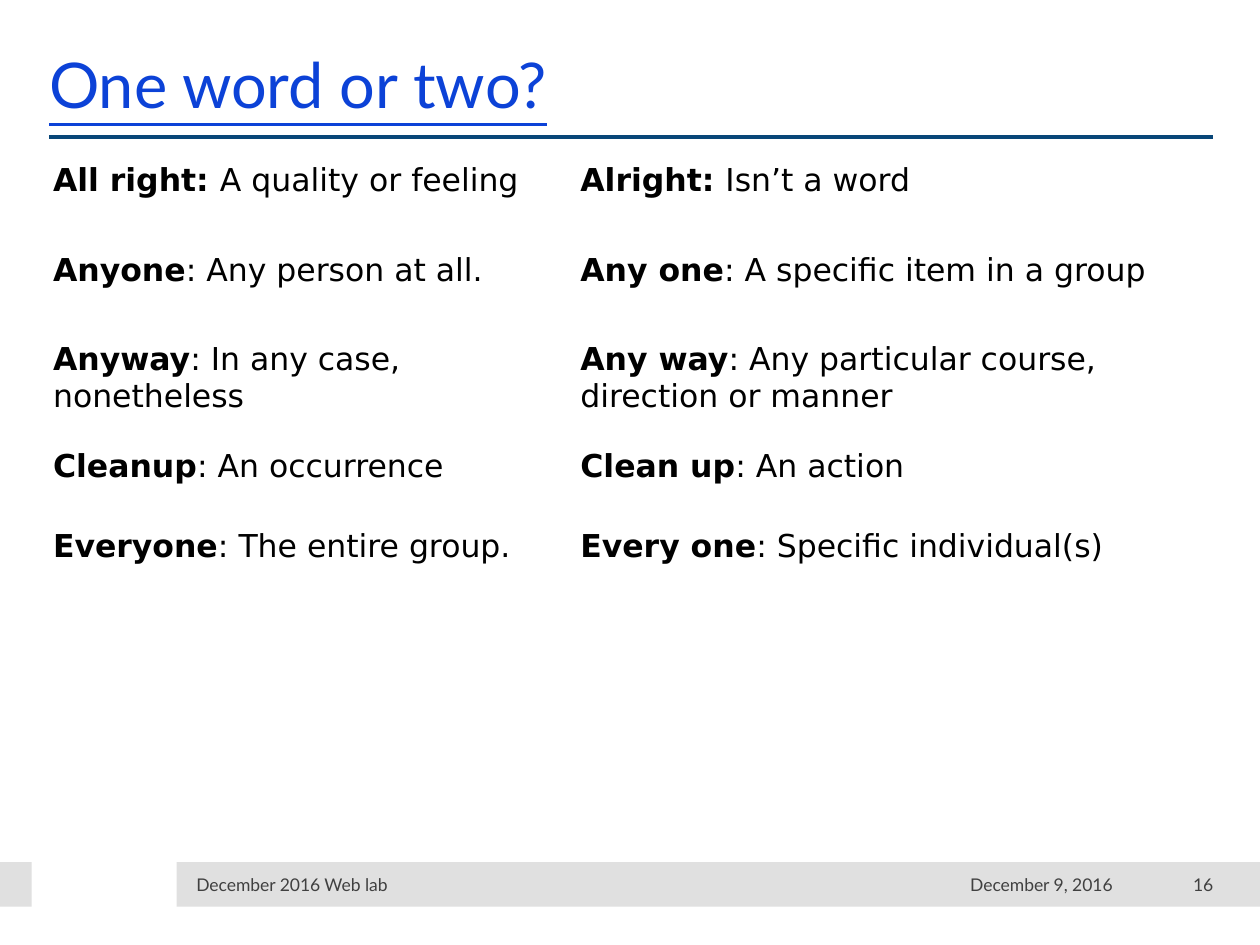
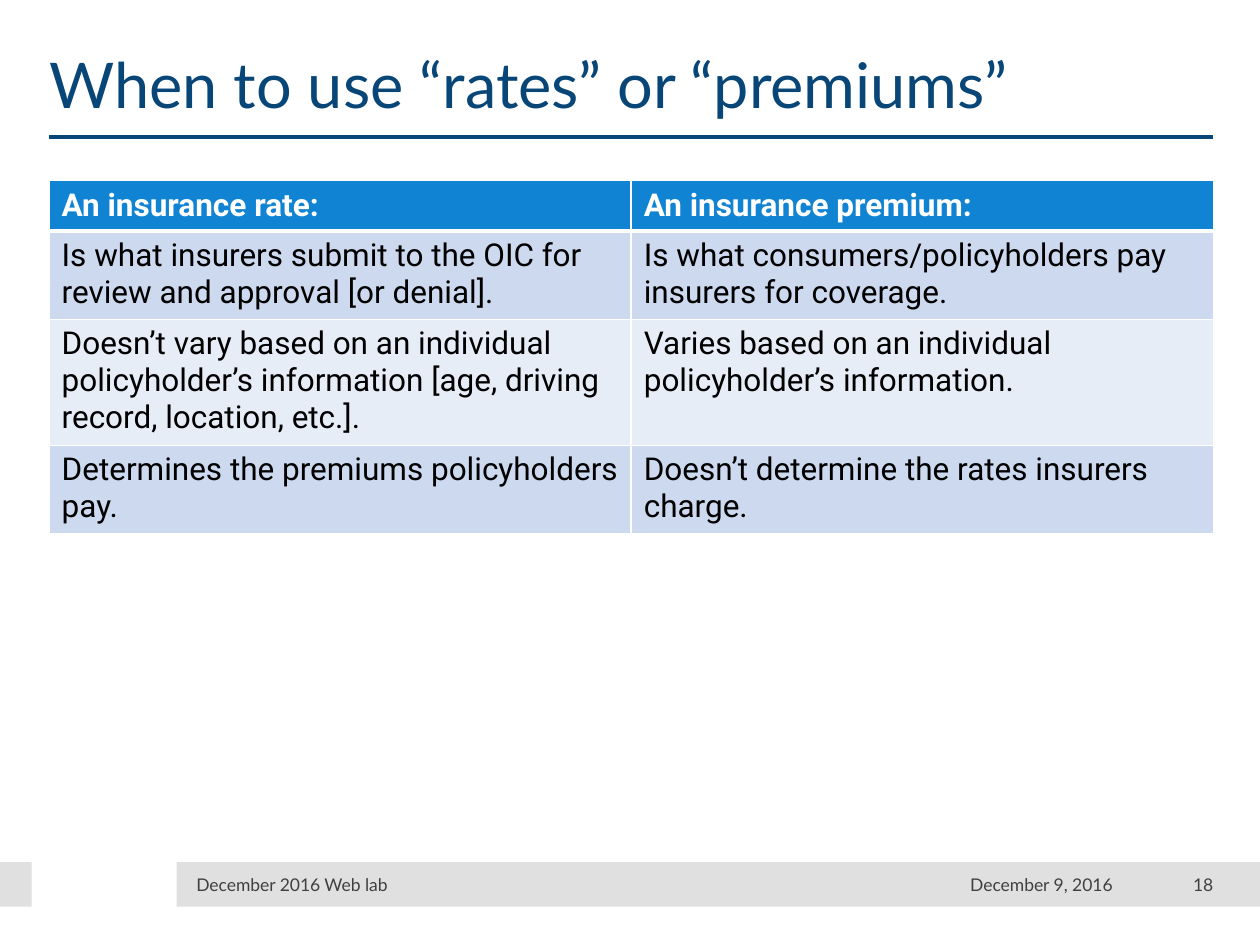
from lxml import etree
from pptx import Presentation
from pptx.dml.color import RGBColor
from pptx.enum import shapes, text
from pptx.oxml import ns
from pptx.util import Cm, Pt

HUES = {
    "navy": "084678", "link": "0C42D7", "band": "E0E0E0", "gray": "404040",
    "head": "1084D3", "dark": "CCD9EF", "pale": "E7EDF7",
    "black": "000000", "white": "FFFFFF",
}
LEFT, WIDE = 0.99, 23.47
PAIRS = [
    [("All right: ", "A quality or feeling"), ("Alright: ", "Isn’t a word")],
    [("Anyone", ": Any person at all."),
     ("Any one", ": A specific item in a group")],
    [("Anyway", ": In any case, nonetheless"),
     ("Any way", ": Any particular course, direction or manner")],
    [("Cleanup", ": An occurrence"), ("Clean up", ": An action")],
    [("Everyone", ": The entire group."),
     ("Every one", ": Specific individual(s)")],
]
RATES = [
    ("An insurance rate:", "An insurance premium:"),
    ("Is what insurers submit to the OIC for review and approval [or denial].",
     "Is what consumers/policyholders pay insurers for coverage."),
    ("Doesn’t vary based on an individual policyholder’s information "
     "[age, driving record, location, etc.].",
     "Varies based on an individual policyholder’s information."),
    ("Determines the premiums policyholders pay.",
     "Doesn’t determine the rates insurers charge."),
]


def hue(name):
    return RGBColor.from_string(HUES[name])


def write(para, words, font="Lato", size=18, color="black", bold=False, line=None):
    run = para.add_run()
    run.text = words
    face = run.font
    face.name, face.size, face.bold, face.underline = font, Pt(size), bold, line
    face.color.rgb = hue(color)


def inset(frame):
    frame.margin_left = frame.margin_right = 0
    frame.margin_top = frame.margin_bottom = 0
    frame.word_wrap = True


def set_title(slide, words, **style):
    title = slide.shapes.title
    title.left, title.top = Cm(LEFT), Cm(0.91)
    title.width, title.height = Cm(WIDE), Cm(1.85)
    frame = title.text_frame
    inset(frame)
    frame.auto_size = text.MSO_AUTO_SIZE.NONE
    frame.vertical_anchor = text.MSO_ANCHOR.TOP
    para = frame.paragraphs[0]
    para.alignment = text.PP_ALIGN.LEFT
    write(para, words, size=36, **style)


def add_band(slide, left, width):
    band = slide.shapes.add_shape(
        shapes.MSO_SHAPE.RECTANGLE, Cm(left), Cm(17.38), Cm(width), Cm(0.9))
    band.shadow.inherit = False
    band.fill.solid()
    band.fill.fore_color.rgb = hue("band")
    band.line.fill.background()


def add_rule(slide):
    rule = slide.shapes.add_connector(
        shapes.MSO_CONNECTOR.STRAIGHT, Cm(LEFT), Cm(2.76), Cm(LEFT + WIDE), Cm(2.76))
    rule.line.color.rgb = hue("navy")
    rule.line.width = Pt(2)
    etree.SubElement(rule._element.spPr, ns.qn("a:effectLst"))


def add_note(slide, words, left, width, align):
    frame = slide.shapes.add_textbox(
        Cm(left), Cm(17.55), Cm(width), Cm(0.56)).text_frame
    inset(frame)
    frame.vertical_anchor = text.MSO_ANCHOR.MIDDLE
    para = frame.paragraphs[0]
    para.alignment = align
    write(para, words, size=10, color="gray")


def add_page(deck, title, number, **style):
    slide = deck.slides.add_slide(deck.slide_layouts[5])
    add_band(slide, 3.56, 21.84)
    add_band(slide, 0, 0.64)
    add_rule(slide)
    set_title(slide, title, **style)
    right = text.PP_ALIGN.RIGHT
    add_note(slide, "December 2016 Web lab", 3.96, 9.32, text.PP_ALIGN.LEFT)
    add_note(slide, number, 22.68, 1.78, right)
    add_note(slide, "December 9, 2016", 16.51, 5.92, right)
    return slide


def add_grid(slide, top, cols, rows):
    grid = slide.shapes.add_table(
        len(rows), len(cols), Cm(LEFT), Cm(top), Cm(sum(cols)), Cm(sum(rows))).table
    grid.horz_banding = False
    for col, width in zip(grid.columns, cols):
        col.width = Cm(width)
    for row, height in zip(grid.rows, rows):
        row.height = Cm(height)
    return grid


def add_edge(cell, side, width):
    edge = etree.SubElement(
        cell._tc.get_or_add_tcPr(), ns.qn("a:ln" + side), w=str(Pt(width)))
    fill = etree.SubElement(edge, ns.qn("a:solidFill"))
    etree.SubElement(fill, ns.qn("a:srgbClr"), val=HUES["white"])


def fill_pairs(grid):
    grid.first_row = False
    for row, pair in zip(grid.rows, PAIRS):
        for cell, (term, sense) in zip(row.cells, pair):
            cell.margin_left = cell.margin_right = Cm(0.08)
            cell.margin_top = cell.margin_bottom = Cm(0.08)
            cell.fill.background()
            para = cell.text_frame.paragraphs[0]
            write(para, term, font="DejaVu Sans", bold=True)
            write(para, sense, font="DejaVu Sans")


def fill_rates(grid):
    for index, (row, pair) in enumerate(zip(grid.rows, RATES)):
        head = index == 0
        shade = "head" if head else "dark" if index % 2 else "pale"
        for cell, words in zip(row.cells, pair):
            add_edge(cell, "L", 1)
            add_edge(cell, "R", 1)
            add_edge(cell, "T", 3 if index == 1 else 1)
            add_edge(cell, "B", 3 if head else 1)
            cell.fill.solid()
            cell.fill.fore_color.rgb = hue(shade)
            write(cell.text_frame.paragraphs[0], words, font="Roboto",
                  color="white" if head else "black", bold=head)


def main():
    deck = Presentation()
    deck.slide_width, deck.slide_height = Cm(25.4), Cm(19.05)
    words = add_page(deck, "One word or two?", "16", color="link", line=True)
    fill_pairs(add_grid(words, 3.2, [10.63, 12.84], [1.8, 1.8, 2.15, 1.63, 1.8]))
    rates = add_page(deck, "When to use “rates” or “premiums”", "18", color="navy")
    fill_rates(add_grid(rates, 3.64, [WIDE / 2] * 2, [1.02, 1.74, 2.49, 1.74]))
    deck.save("out.pptx")


if __name__ == "__main__":
    main()
